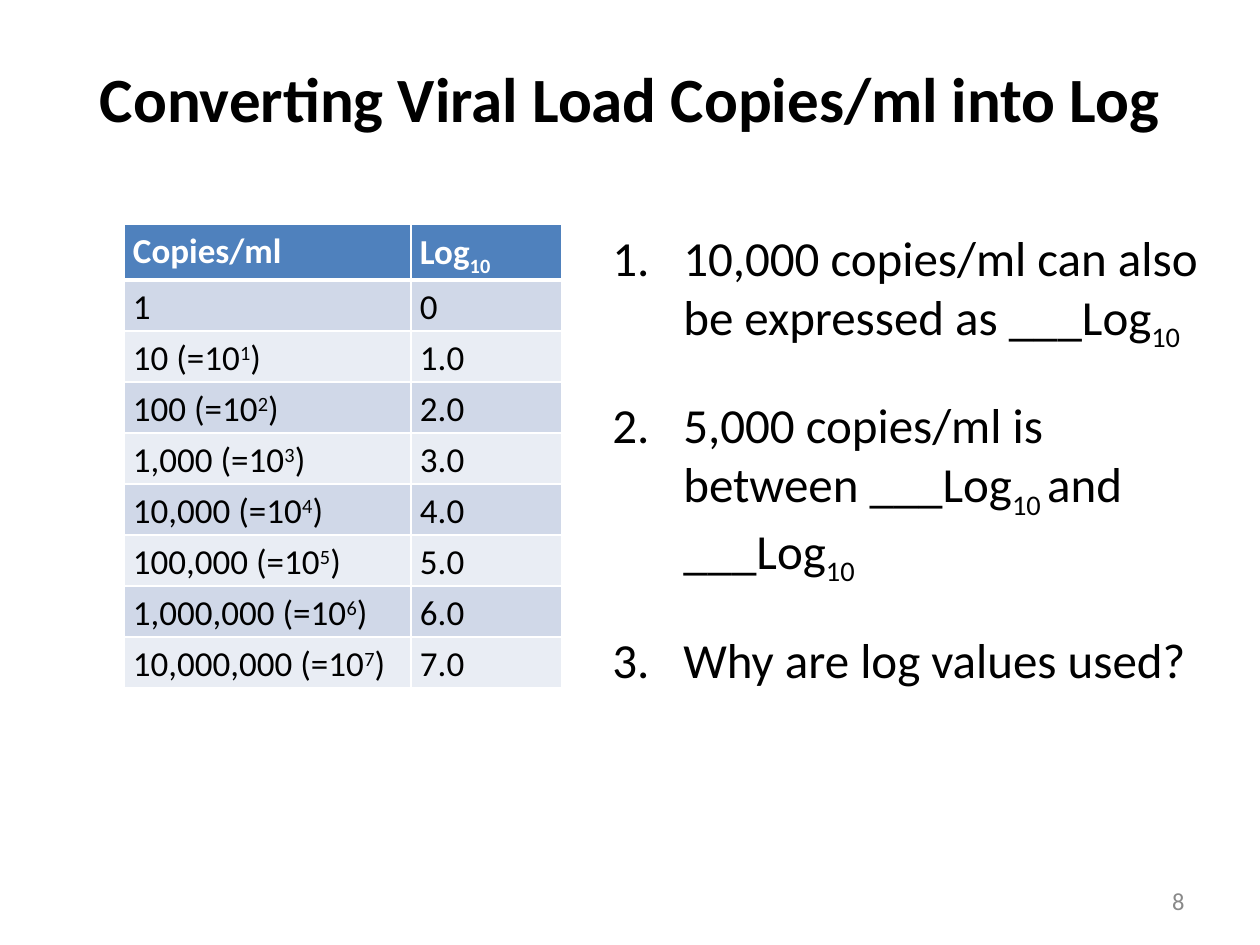
import lxml.etree
import pptx
import pptx.dml.color
import pptx.enum.text
import pptx.oxml.ns
import pptx.util

EMU_PER_PX = 914400 / 126
FONT = "Calibri"
COLORS = {
    "text": "000000",
    "white": "FFFFFF",
    "number": "898989",
    "header": "4F81BD",
    "odd": "D0D8E8",
    "even": "E9EDF4",
}
ALIGN = pptx.enum.text.PP_ALIGN
ANCHOR = pptx.enum.text.MSO_ANCHOR
SUBSCRIPT, SUPERSCRIPT = -25000, 30000

TITLE = "Converting Viral Load Copies/ml into Log"
HEADER = ("Copies/ml", "Log|10")
QUESTIONS = (
    "10,000 copies/ml can also be expressed as ___Log|10",
    "5,000 copies/ml is between ___Log|10 |and ___Log|10",
    "Why are log values used?",
)


def px(n):
    """Turn pixels into EMU."""
    return pptx.util.Emu(round(n * EMU_PER_PX))


def rgb(name):
    """Look up a named colour."""
    return pptx.dml.color.RGBColor.from_string(COLORS[name])


def place(s, left, top, width, height):
    """Move and size a shape."""
    s.left, s.top, s.width, s.height = px(left), px(top), px(width), px(height)


def write(p, text, size, color="text", bold=False, baseline=SUBSCRIPT):
    """Fill a paragraph, shifting every second piece between bars off the baseline."""
    for i, piece in enumerate(text.split("|")):
        r = p.add_run()
        r.text = piece
        if i % 2:
            r.font._element.set("baseline", str(baseline))
    p.font.name = FONT
    p.font.size = pptx.util.Pt(size)
    p.font.bold = bold
    p.font.color.rgb = rgb(color)


def add_title(slide):
    """Format the title placeholder."""
    s = slide.shapes.title
    place(s, 0, 6, 1260, 183)
    tf = s.text_frame
    tf.vertical_anchor = ANCHOR.MIDDLE
    p = tf.paragraphs[0]
    p.alignment = ALIGN.CENTER
    write(p, TITLE, 36, bold=True)


def add_text_box(slide, left, top, width, height):
    """Add a wrapping text box and return its text frame."""
    s = slide.shapes.add_textbox(px(left), px(top), px(width), px(height))
    s.text_frame.word_wrap = True
    return s.text_frame


def add_number(slide, number):
    """Add the slide number."""
    tf = add_text_box(slide, 903, 876, 294, 50)
    tf.vertical_anchor = ANCHOR.MIDDLE
    p = tf.paragraphs[0]
    p.alignment = ALIGN.RIGHT
    write(p, number, 14, "number")


def add_questions(slide):
    """Add the numbered questions."""
    tf = add_text_box(slide, 600, 221, 635, 624)
    for i, question in enumerate(QUESTIONS):
        p = tf.add_paragraph() if i else tf.paragraphs[0]
        p.space_before = p.space_after = pptx.util.Pt(12)
        write(p, question, 28)
        ppr = p._p.get_or_add_pPr()
        ppr.set("marL", str(px(71)))
        ppr.set("indent", str(-px(71)))
        bullet = lxml.etree.Element(pptx.oxml.ns.qn("a:buAutoNum"), type="arabicPeriod")
        ppr.find(pptx.oxml.ns.qn("a:defRPr")).addprevious(bullet)


def set_borders(cell, widths):
    """Draw white cell borders, widths in points by side."""
    qn = pptx.oxml.ns.qn
    tcpr = cell._tc.get_or_add_tcPr()
    for i, (side, width) in enumerate(widths.items()):
        ln = lxml.etree.Element(qn(f"a:ln{side}"), w=str(pptx.util.Pt(width)))
        fill = lxml.etree.SubElement(ln, qn("a:solidFill"))
        lxml.etree.SubElement(fill, qn("a:srgbClr"), val=COLORS["white"])
        tcpr.insert(i, ln)


def add_log_table(slide):
    """Add the table of powers of ten and their logs."""
    rows = [HEADER, ("1", "0")]
    rows += [(f"{10 ** n:,} (=10|{n}|)", f"{n}.0") for n in range(1, 8)]
    table = slide.shapes.add_table(
        len(rows), 2, px(124), px(224), px(438), px(464)
    ).table
    for column, width in zip(table.columns, (287, 151)):
        column.width = px(width)
    for i, texts in enumerate(rows):
        is_header = i == 0
        table.rows[i].height = px(56 if is_header else 51)
        fill = "header" if is_header else "odd" if i % 2 else "even"
        for j, text in enumerate(texts):
            cell = table.cell(i, j)
            cell.margin_left = cell.margin_right = px(9)
            cell.margin_top = cell.margin_bottom = 0
            cell.fill.solid()
            cell.fill.fore_color.rgb = rgb(fill)
            set_borders(cell, {"L": 1, "R": 1, "T": 3 if i == 1 else 1, "B": 3 if is_header else 1})
            p = cell.text_frame.paragraphs[0]
            p.line_spacing = 1.15
            write(p, text, 20, "white" if is_header else "text", is_header,
                  SUBSCRIPT if is_header else SUPERSCRIPT)


def main():
    """Build and save the slide."""
    prs = pptx.Presentation()
    prs.slide_width, prs.slide_height = px(1260), px(945)
    slide = prs.slides.add_slide(prs.slide_layouts[5])
    add_title(slide)
    add_number(slide, "8")
    add_log_table(slide)
    add_questions(slide)
    prs.save("out.pptx")


if __name__ == "__main__":
    main()
